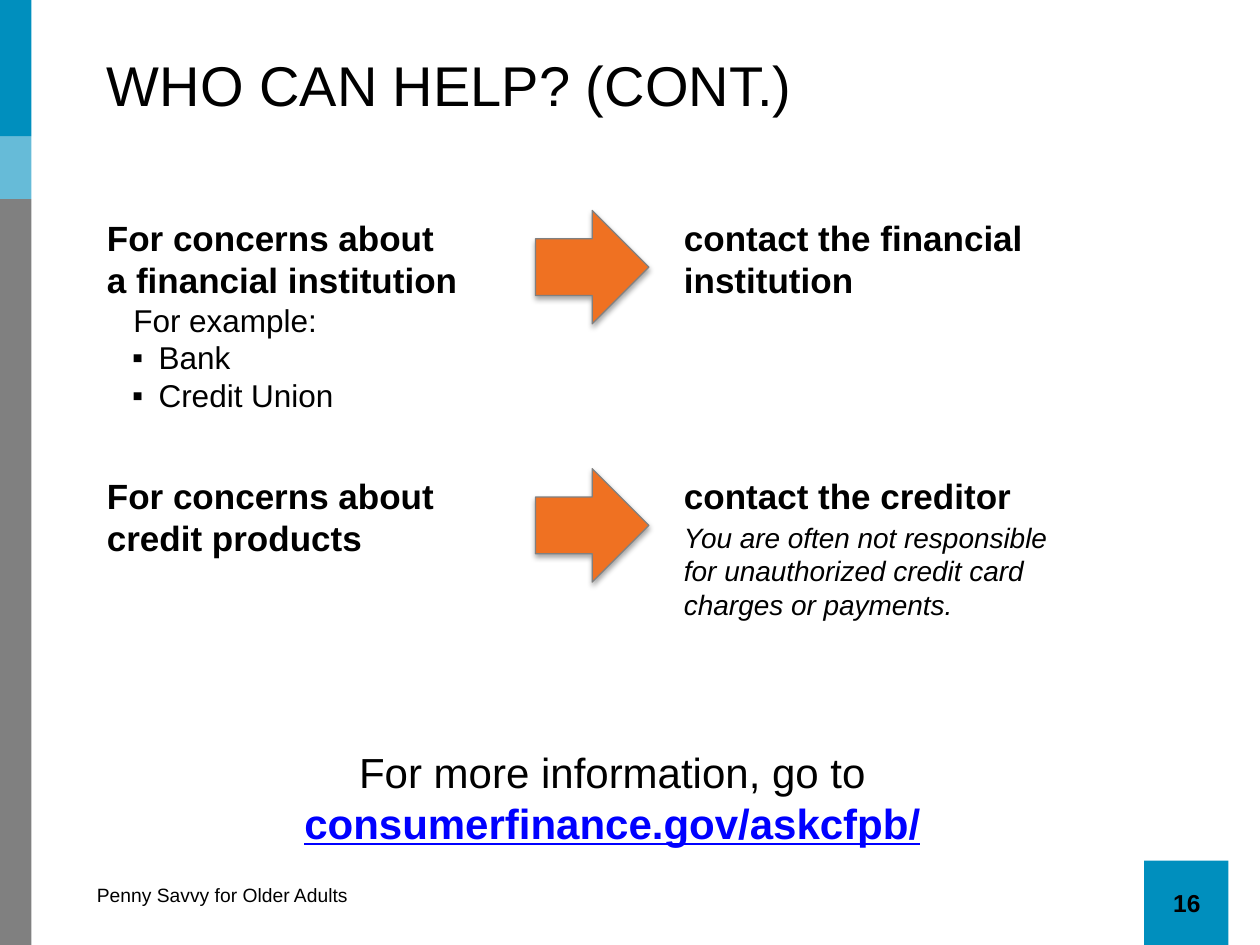
from dataclasses import dataclass

from lxml import etree
from pptx import Presentation
from pptx.dml.color import RGBColor
from pptx.enum.shapes import MSO_SHAPE
from pptx.enum.text import MSO_ANCHOR, PP_ALIGN
from pptx.oxml import parse_xml
from pptx.oxml.ns import nsdecls, qn
from pptx.util import Inches, Pt

RECT = MSO_SHAPE.RECTANGLE
ARROW = MSO_SHAPE.RIGHT_ARROW
ROUND_TOP = MSO_SHAPE.ROUND_2_SAME_RECTANGLE
LEFT, CENTER = PP_ALIGN.LEFT, PP_ALIGN.CENTER
TOP, MIDDLE = MSO_ANCHOR.TOP, MSO_ANCHOR.MIDDLE


@dataclass(frozen=True)
class Theme:
    font: str = "Arial"
    text: str = "000000"
    link: str = "0000FF"
    blue: str = "008FBE"
    gray: str = "808080"
    orange: str = "EF7122"
    title: int = 32
    info: int = 24
    heading: int = 20
    body: int = 18
    note: int = 16
    number: int = 14
    footer: int = 11


class SlideBuilder:
    def __init__(self, slide, theme):
        self.s = slide
        self.theme = theme

    def shape(self, kind, x, y, w, h, fill=None, alpha=None):
        sp = self.s.shapes.add_shape(kind, Inches(x), Inches(y), Inches(w), Inches(h))
        sp.shadow.inherit = False
        sp.line.fill.background()
        if fill is None:
            sp.fill.background()
            return sp
        sp.fill.solid()
        sp.fill.fore_color.rgb = RGBColor.from_string(fill)
        if alpha is not None:
            color = sp.fill._xPr.find(qn("a:solidFill"))[0]
            etree.SubElement(color, qn("a:alpha")).set("val", str(alpha * 1000))
        return sp

    def arrow(self, x, y, size):
        sp = self.shape(ARROW, x, y, size, size, self.theme.orange)
        sp.line.color.rgb = RGBColor.from_string(self.theme.gray)
        sp.line.width = Pt(0.75)
        sp._element.spPr.find(qn("a:effectLst")).append(parse_xml(
            f'<a:outerShdw {nsdecls("a")} blurRad="40000" dist="23000" dir="5400000" '
            'rotWithShape="0"><a:srgbClr val="000000"><a:alpha val="35000"/>'
            '</a:srgbClr></a:outerShdw>'))

    def format_run(self, r, size, color=None, **style):
        r.font.name = self.theme.font
        r.font.size = Pt(size)
        r.font.color.rgb = RGBColor.from_string(color or self.theme.text)
        for name, value in style.items():
            setattr(r.font, name, value)

    def text(self, content, x, y, w, h, size, align=LEFT, anchor=TOP, **style):
        box = self.s.shapes.add_textbox(Inches(x), Inches(y), Inches(w), Inches(h))
        tf = box.text_frame
        tf.word_wrap = True
        tf.vertical_anchor = anchor
        p = tf.paragraphs[0]
        p.text = content
        p.alignment = align
        for r in p.runs:
            self.format_run(r, size, **style)
        return tf

    def sub_item(self, tf, content, margin, hanging=0, bullet=None):
        p = tf.add_paragraph()
        p.text = content
        self.format_run(p.runs[0], self.theme.body)
        pPr = p._p.get_or_add_pPr()
        pPr.set("marL", str(Inches(margin)))
        pPr.set("indent", str(-Inches(hanging)))
        if bullet:
            etree.SubElement(pPr, qn("a:buFont")).set("typeface", self.theme.font)
            etree.SubElement(pPr, qn("a:buChar")).set("char", bullet)

    def info_banner(self, lead, address, x, y, w, h):
        sp = self.shape(ROUND_TOP, x, y, w, h)
        tf = sp.text_frame
        tf.word_wrap = True
        p = tf.paragraphs[0]
        p.alignment = CENTER
        r = p.add_run()
        r.text = lead
        self.format_run(r, self.theme.info)
        r = p.add_run()
        r.text = address
        self.format_run(r, self.theme.info, self.theme.link, bold=True, underline=True)


def main():
    prs = Presentation()
    prs.slide_width, prs.slide_height = Inches(10), Inches(7.5)
    theme = Theme()
    b = SlideBuilder(prs.slides.add_slide(prs.slide_layouts[6]), theme)

    b.shape(RECT, 9.08, 6.83, 0.67, 0.67, theme.blue)
    b.text("Penny Savvy for Older Adults", 0.67, 6.96, 2.42, 0.29, theme.footer)
    b.text("16", 9.17, 7, 0.5, 0.34, theme.number, CENTER, bold=True)

    b.shape(RECT, 0, 1.58, 0.25, 5.92, theme.gray)
    b.shape(RECT, 0, 1.08, 0.25, 0.5, theme.blue, alpha=60)
    b.shape(RECT, 0, 0, 0.25, 1.08, theme.blue)

    b.text("WHO CAN HELP? (CONT.)", 0.75, 0.33, 9, 0.67, theme.title, anchor=MIDDLE)

    rows = [
        (1.67, 1.68, "For concerns about\va financial institution",
         ["Bank", "Credit Union"], 0.77, "contact the financial institution"),
        (3.72, 1.08, "For concerns about\vcredit products",
         [], 0.44, "contact the creditor"),
    ]
    for y, concern_h, concern, examples, contact_h, contact in rows:
        tf = b.text(concern, 0.75, y, 3.92, concern_h, theme.heading, bold=True)
        if examples:
            b.sub_item(tf, "For example:", 0.21)
        for example in examples:
            b.sub_item(tf, example, 0.41, 0.21, "▪")
        b.arrow(4.25, y, 0.9)
        b.text(contact, 5.33, y, 3.03, contact_h, theme.heading, bold=True)

    b.text("You are often not responsible for unauthorized credit card charges or payments.",
           5.33, 4.08, 3.25, 0.91, theme.note, italic=True)
    b.info_banner("For more information, go to ", "consumerfinance.gov/askcfpb/",
                  1.92, 5.83, 5.88, 0.95)

    prs.save("out.pptx")


if __name__ == "__main__":
    main()
